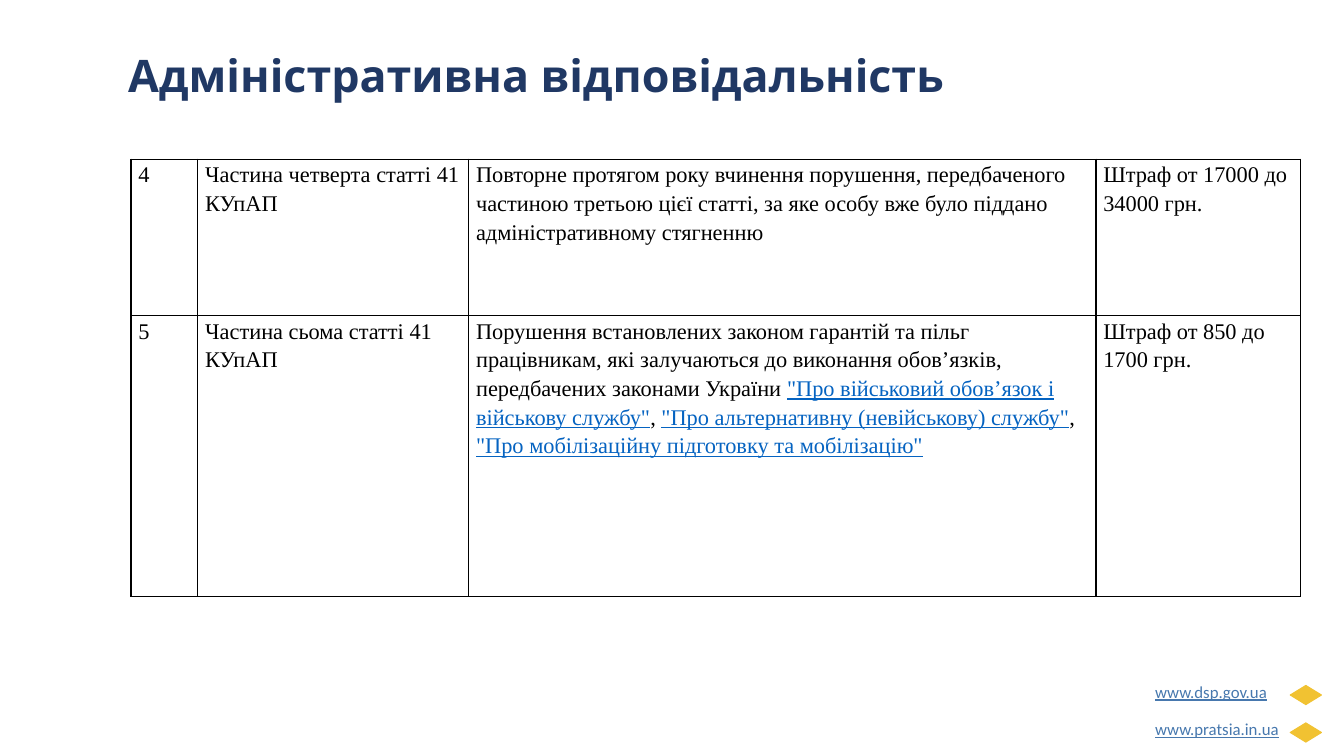
from lxml.etree import SubElement
from pptx import Presentation
from pptx.dml.color import RGBColor
from pptx.enum.shapes import MSO_SHAPE as Shape
from pptx.enum.text import MSO_ANCHOR as Anchor, MSO_AUTO_SIZE as AutoSize, PP_ALIGN as Align
from pptx.oxml.ns import qn
from pptx.util import Pt

NAVY = RGBColor(0x20, 0x38, 0x64)
GOLD = RGBColor(0xF1, 0xC2, 0x32)
SITE_BLUE = RGBColor(0x47, 0x78, 0xAE)
LINK_BLUE = RGBColor(0x05, 0x63, 0xC1)
BLACK = RGBColor(0, 0, 0)

COLUMN_WIDTHS = (47.75, 193.5, 448, 146.25)
ROW_HEIGHTS = (111.6, 201)
ROWS = (
    (
        ("4",),
        ("Частина четверта статті 41 КУпАП",),
        ("Повторне протягом року вчинення порушення, передбаченого частиною "
         "третьою цієї статті, за яке особу вже було піддано "
         "адміністративному стягненню",),
        ("Штраф от 17000 до 34000 грн.",),
    ),
    (
        ("5",),
        ("Частина сьома статті 41 КУпАП",),
        ("Порушення встановлених законом гарантій та пільг працівникам, які "
         "залучаються до виконання обов’язків, передбачених законами України ",
         '"Про військовий обов’язок і військову службу"',
         ", ",
         '"Про альтернативну (невійськову) службу"',
         ", ",
         '"Про мобілізаційну підготовку та мобілізацію"'),
        ("Штраф от 850 до 1700 грн.",),
    ),
)
SITES = ("www.dsp.gov.ua", "www.pratsia.in.ua")
SITE_STEP = 26.75


def style_font(font, name, size, color):
    font.name = name
    font.size = Pt(size)
    font.color.rgb = color


def set_title(page, text):
    title = page.shapes.title
    title.left, title.top, title.width, title.height = Pt(84.25), Pt(30.5), Pt(717), Pt(46)
    frame = title.text_frame
    frame.text = text
    frame.auto_size = AutoSize.NONE
    frame.vertical_anchor = Anchor.MIDDLE
    para = frame.paragraphs[0]
    para.alignment = Align.LEFT
    style_font(para.font, "Open Sans", 32, NAVY)
    para.font.bold = True


def add_site(page, address, offset):
    diamond = page.shapes.add_shape(
        Shape.FLOWCHART_DECISION, Pt(921.6), Pt(489.6 + offset), Pt(22.3), Pt(13.7))
    diamond.shadow.inherit = False
    diamond.fill.solid()
    diamond.fill.fore_color.rgb = GOLD
    diamond.line.color.rgb = GOLD
    diamond.line.width = Pt(0.75)

    box = page.shapes.add_textbox(Pt(815.8), Pt(479.5 + offset), Pt(125), Pt(33.8))
    frame = box.text_frame
    frame.word_wrap = True
    frame.margin_left = frame.margin_right = Pt(9.36)
    frame.margin_top = frame.margin_bottom = Pt(9.36)
    frame.text = address
    para = frame.paragraphs[0]
    style_font(para.font, "Calibri", 12, SITE_BLUE)
    para.font.underline = True


def add_borders(cell):
    properties = cell._tc.get_or_add_tcPr()
    for side in ("a:lnL", "a:lnR", "a:lnT", "a:lnB"):
        line = SubElement(properties, qn(side), w=str(Pt(1)))
        fill = SubElement(line, qn("a:solidFill"))
        SubElement(fill, qn("a:srgbClr"), val=str(BLACK))


def fill_cell(cell, parts):
    add_borders(cell)
    cell.fill.background()
    cell.margin_left = cell.margin_right = Pt(5.25)
    cell.margin_top = cell.margin_bottom = Pt(0)
    para = cell.text_frame.paragraphs[0]
    para.line_spacing = 1.15
    style_font(para.font, "Times New Roman", 16, BLACK)
    for index, part in enumerate(parts):
        span = para.add_run()
        span.text = part
        is_link = index % 2 == 1
        style_font(span.font, "Times New Roman", 16, LINK_BLUE if is_link else BLACK)
        span.font.underline = is_link


def add_fines_table(page):
    table = page.shapes.add_table(
        len(ROWS), len(COLUMN_WIDTHS), Pt(93.6), Pt(113.75),
        Pt(sum(COLUMN_WIDTHS)), Pt(sum(ROW_HEIGHTS))).table
    table.first_row = False
    table.horz_banding = False
    for column, width in zip(table.columns, COLUMN_WIDTHS):
        column.width = Pt(width)
    for row, height, contents in zip(table.rows, ROW_HEIGHTS, ROWS):
        row.height = Pt(height)
        for cell, parts in zip(row.cells, contents):
            fill_cell(cell, parts)


def main():
    deck = Presentation()
    deck.slide_width, deck.slide_height = Pt(960), Pt(540)
    page = deck.slides.add_slide(deck.slide_layouts[5])
    for index, address in enumerate(SITES):
        add_site(page, address, index * SITE_STEP)
    set_title(page, "Адміністративна відповідальність")
    add_fines_table(page)
    deck.save("out.pptx")


if __name__ == "__main__":
    main()
